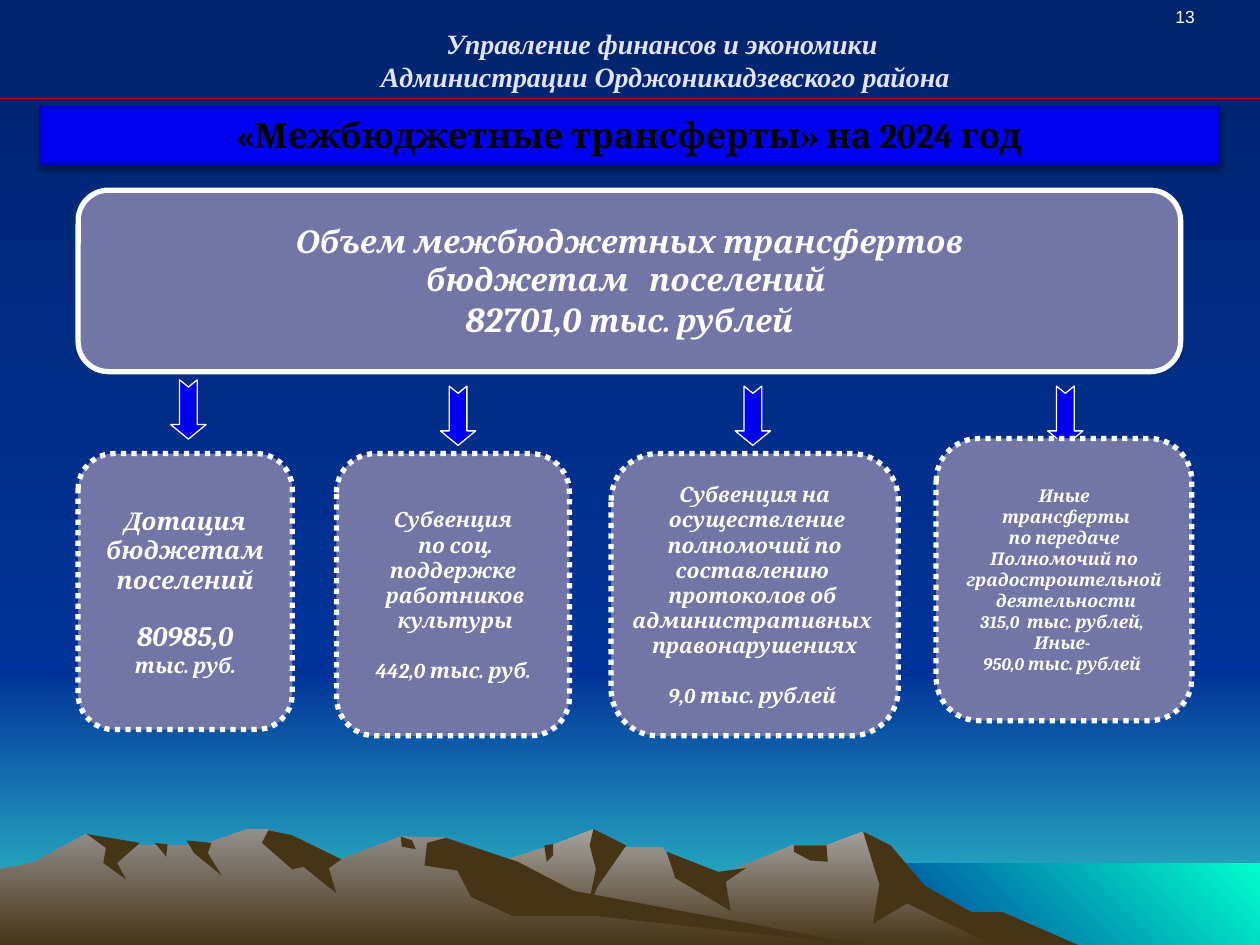
from dataclasses import dataclass

from lxml import etree
from pptx import Presentation
from pptx.dml.color import RGBColor
from pptx.enum.dml import MSO_LINE
from pptx.enum.shapes import MSO_CONNECTOR, MSO_SHAPE
from pptx.enum.text import MSO_ANCHOR, MSO_AUTO_SIZE, PP_ALIGN
from pptx.oxml import parse_xml
from pptx.oxml.ns import nsdecls, qn
from pptx.util import Inches, Pt


@dataclass(frozen=True)
class Theme:
    night: str = "00246D"
    sky: str = "003399"
    horizon: str = "33CCCC"
    sea: str = "00FFCC"
    earth: str = "463416"
    far_peak: str = "A5A29F"
    near_peak: str = "938F8B"
    header: str = "E3E3FF"
    rule: str = "C00000"
    accent: str = "0000F1"
    accent_edge: str = "0000CC"
    panel: str = "7176A6"
    white: str = "FFFFFF"
    black: str = "000000"
    sans: str = "Arial"
    serif: str = "Cambria"
    header_font: str = "Times New Roman"
    large: int = 20
    medium: int = 18
    heading: int = 16
    lead: int = 14
    body: int = 12
    small: int = 10


THEME = Theme()


def paint(fill, colors, angle=270):
    """Fill with one colour, or with a two-colour gradient at a counter-clockwise angle."""
    if len(colors) == 1:
        fill.solid()
        fill.fore_color.rgb = RGBColor.from_string(colors[0])
        return
    fill.gradient()
    fill.gradient_angle = angle
    for stop, color in zip(fill.gradient_stops, colors):
        stop.color.rgb = RGBColor.from_string(color)


def style_text(run, size, face, color, bold=True, italic=True):
    font = run.font
    font.size, font.name, font.bold, font.italic = Pt(size), face, bold, italic
    font.color.rgb = RGBColor.from_string(color)


prs = Presentation()
prs.slide_width, prs.slide_height = Inches(10), Inches(7.5)
slide = prs.slides.add_slide(prs.slide_layouts[5])
shapes = slide.shapes
paint(slide.background.fill, (THEME.night, THEME.sky))

# Sky, horizon and sea
for place, colors, angle in (
    ((0, 5.33, 10, 2.17), (THEME.sky, THEME.horizon), 270),
    ((0, 0, 10, 5.33), (THEME.night, THEME.sky), 270),
    ((6.83, 6.85, 3.17, 0.65), (THEME.sky, THEME.sea), 45),
):
    band = shapes.add_shape(MSO_SHAPE.RECTANGLE, *map(Inches, place))
    band.shadow.inherit = False
    band.line.fill.background()
    paint(band.fill, colors, angle)

# Mountains and their shaded slopes, in hundredths of an inch
shade = (THEME.earth,)
mountains = [
    ((THEME.far_peak, THEME.earth), [
        (821, 751), (723, 698), (685, 660), (656, 671), (629, 671), (566, 697), (536, 690),
        (526, 673), (486, 673), (471, 658), (438, 671), (394, 685), (327, 709), (258, 751)]),
    (shade, [(685, 660), (698, 702), (693, 733), (720, 717), (792, 752), (858, 751),
             (796, 724), (771, 724), (734, 703), (707, 671)]),
    (shade, [(471, 658), (468, 671), (473, 690), (465, 727), (474, 704), (497, 671)]),
    (shade, [(529, 676), (536, 697), (580, 723), (576, 700), (592, 689), (570, 692)]),
    (shade, [(630, 671), (630, 676), (643, 683), (657, 684), (656, 671)]),
    (shade, [(432, 671), (439, 670), (439, 679), (434, 684)]),
    ((THEME.near_peak, THEME.earth), [
        (690, 751), (432, 712), (354, 665), (318, 664), (271, 682), (236, 681), (223, 663),
        (212, 658), (196, 658), (160, 671), (94, 671), (68, 662), (26, 685), (0, 690),
        (0, 751)]),
    (shade, [(213, 659), (208, 669), (232, 690), (241, 688), (267, 709), (261, 689),
             (271, 682), (232, 663)]),
    (shade, [(354, 665), (339, 669), (337, 687), (363, 691), (374, 712), (407, 727),
             (472, 727), (690, 751), (455, 707), (411, 684)]),
    (shade, [(318, 664), (327, 667), (330, 674), (319, 672)]),
    (shade, [(148, 667), (168, 669), (165, 677), (176, 695), (154, 677)]),
    (shade, [(123, 669), (133, 670), (132, 680)]),
    (shade, [(69, 662), (111, 669), (93, 685), (100, 698), (82, 685), (84, 673)]),
]
for colors, points in mountains:
    builder = shapes.build_freeform(*points[0], scale=Inches(0.01))
    builder.add_line_segments(points[1:], close=True)
    slope = builder.convert_to_shape()
    slope.shadow.inherit = False
    slope.line.fill.background()
    paint(slope.fill, colors)

# Header, rule and slide number
header = shapes.add_textbox(Inches(0.87), Inches(0.16), Inches(8.82), Inches(0.64))
header.text_frame.word_wrap = True
header.text_frame.text = "Управление финансов и экономики \vАдминистрации Орджоникидзевского района"
header_line = header.text_frame.paragraphs[0]
header_line.alignment = PP_ALIGN.CENTER
for run in header_line.runs:
    style_text(run, THEME.heading, THEME.header_font, THEME.header)

rule = shapes.add_connector(MSO_CONNECTOR.STRAIGHT, 0, Inches(0.78), Inches(10), Inches(0.78))
rule.line.color.rgb = RGBColor.from_string(THEME.rule)
rule.line.width = Pt(0.75)
etree.SubElement(rule.element.spPr, qn("a:effectLst"))

number = shapes.add_textbox(Inches(9.23), 0, Inches(0.36), Inches(0.27))
number.text_frame.word_wrap = False
number.text_frame.text = "13"
style_text(number.text_frame.paragraphs[0].runs[0], THEME.small, THEME.sans,
           THEME.white, bold=False, italic=False)

# Title bar, brought in front of the landscape
title = shapes.title
header.element.addnext(title.element)
title.left, title.top, title.width, title.height = map(Inches, (0.32, 0.85, 9.35, 0.45))
paint(title.fill, (THEME.accent,))
title.line.color.rgb = RGBColor.from_string(THEME.accent_edge)
title.line.width = Pt(1.5)
title.element.spPr.append(parse_xml(
    f'<a:effectLst {nsdecls("a")}><a:outerShdw blurRad="40000" dist="20000" dir="5400000" '
    f'rotWithShape="0"><a:srgbClr val="{THEME.black}"><a:alpha val="38000"/></a:srgbClr>'
    '</a:outerShdw></a:effectLst>'))
title.text_frame.auto_size = MSO_AUTO_SIZE.NONE
title.text_frame.vertical_anchor = MSO_ANCHOR.TOP
title_line = title.text_frame.paragraphs[0]
title_line.alignment = PP_ALIGN.CENTER
for text, size, face in (("«", THEME.medium, THEME.sans),
                         ("Межбюджетные трансферты» на 2024 год", THEME.large, THEME.serif)):
    run = title_line.add_run()
    run.text = text
    style_text(run, size, face, THEME.black, italic=False)

# Arrows from the total to its parts
for left, top in ((1.26, 3.11), (3.4, 3.16), (5.74, 3.16), (8.22, 3.16)):
    arrow = shapes.add_shape(MSO_SHAPE.NOTCHED_RIGHT_ARROW, Inches(left), Inches(top),
                             Inches(0.47), Inches(0.28))
    arrow.rotation = 90
    arrow.adjustments[1] = 0.41
    arrow.shadow.inherit = False
    paint(arrow.fill, (THEME.accent,))
    arrow.line.color.rgb = RGBColor.from_string(THEME.white)
    arrow.line.width = Pt(0.75)

# Panels: place, main type size, lines, lines after a gap, other sizes by text
panels = [
    ((0.62, 1.51, 8.75, 1.44), THEME.medium,
     ["Объем межбюджетных трансфертов", "бюджетам   поселений ", "82701,0 |тыс. рублей"],
     [], {"82701,0 ": THEME.large}),
    ((0.62, 3.6, 1.7, 2.19), THEME.lead, ["Дотация", " бюджетам ", "поселений"],
     ["80985,0", "тыс. руб."], {"80985,0": THEME.heading, "тыс. руб.": THEME.body}),
    ((2.67, 3.6, 1.85, 2.24), THEME.body,
     ["Субвенция", " по соц.", "поддержке", " работников", " культуры"],
     ["442,0 тыс. руб."], {}),
    ((4.85, 3.6, 2.28, 2.24), THEME.body,
     ["Субвенция на", " осуществление", " полномочий по ", "составлению ", "протоколов об ",
      "административных ", "правонарушениях"], ["9,0 тыс. рублей "], {}),
    ((7.43, 3.48, 2.03, 2.24), THEME.small,
     ["Иные", " трансферты", " по передаче ", "Полномочий по", "градостроительной",
      " деятельности", "315,0  тыс. рублей, ", "Иные- ", "950,0 тыс. рублей "], [], {}),
]
for index, (place, main_size, lines, amounts, other_sizes) in enumerate(panels):
    panel = shapes.add_shape(MSO_SHAPE.ROUNDED_RECTANGLE, *map(Inches, place))
    panel.shadow.inherit = False
    paint(panel.fill, (THEME.panel,))
    panel.line.color.rgb = RGBColor.from_string(THEME.white)
    panel.line.width = Pt(3)
    frame = panel.text_frame
    if index > 0:
        panel.line.dash_style = MSO_LINE.ROUND_DOT
        frame.margin_left = frame.margin_top = frame.margin_right = frame.margin_bottom = 0
    frame.word_wrap = False
    frame.vertical_anchor = MSO_ANCHOR.MIDDLE
    for row, line in enumerate(lines + amounts):
        paragraph = frame.add_paragraph() if row else frame.paragraphs[0]
        paragraph.alignment = PP_ALIGN.CENTER
        if row == len(lines):
            paragraph.space_before = Pt(THEME.lead)
        for part in line.split("|"):
            run = paragraph.add_run()
            run.text = part
            style_text(run, other_sizes.get(part, main_size), THEME.serif, THEME.white)

prs.save("out.pptx")
